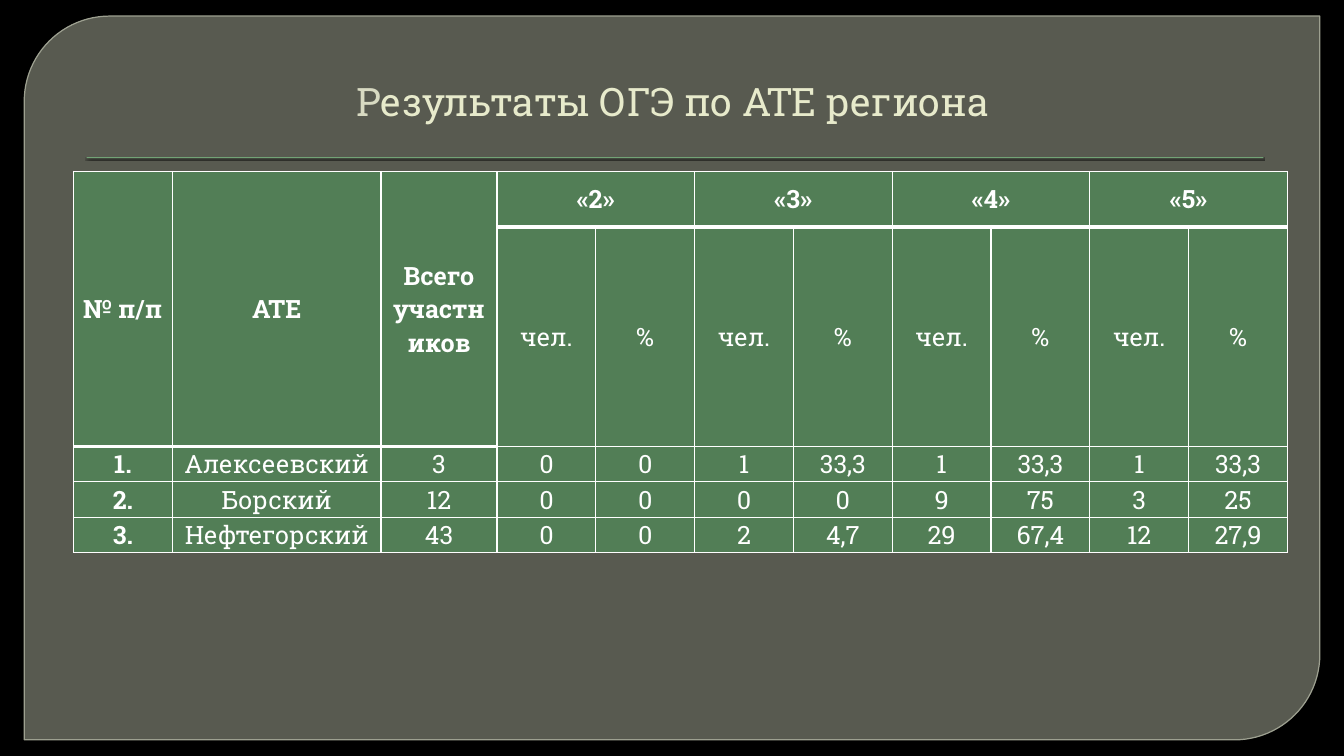
"""Builds the slide with the table of exam results by territory."""
from lxml import etree
from pptx import Presentation
from pptx.dml.color import RGBColor
from pptx.enum import shapes, text
from pptx.oxml import ns
from pptx.util import Inches, Pt

BLACK = RGBColor(0x00, 0x00, 0x00)
PANEL = RGBColor(0x58, 0x5A, 0x50)
PANEL_EDGE = RGBColor(0x9D, 0xA0, 0x90)
RULE = RGBColor(0x72, 0xA3, 0x76)
TITLE_FIRST = RGBColor(0xD8, 0xDA, 0xC2)
TITLE = RGBColor(0xE7, 0xEA, 0xCB)
GREEN = RGBColor(0x52, 0x7E, 0x56)
WHITE = RGBColor(0xFF, 0xFF, 0xFF)
FONT = "Roboto Slab"

GRADES = ["«2»", "«3»", "«4»", "«5»"]
LABEL_COLUMNS = 3
HEADER_ROWS = 2
COLUMN_WIDTHS = [0.98, 2.07, 1.15] + [0.98] * 2 * len(GRADES)
ROW_HEIGHTS = [0.55, 2.18, 0.35, 0.35, 0.35]
ROWS = [
    ["№ п/п", "АТЕ", "Всего участников"] + [part for grade in GRADES for part in (grade, "")],
    [""] * LABEL_COLUMNS + ["чел.", "%"] * len(GRADES),
    ["1.", "Алексеевский", "3", "0", "0", "1", "33,3", "1", "33,3", "1", "33,3"],
    ["2.", "Борский", "12", "0", "0", "0", "0", "9", "75", "3", "25"],
    ["3.", "Нефтегорский", "43", "0", "0", "2", "4,7", "29", "67,4", "12", "27,9"],
]


def add_span(para, words, size, color, bold=False):
    span = para.add_run()
    span.text = words
    span.font.name = FONT
    span.font.size = Pt(size)
    span.font.bold = bold
    span.font.color.rgb = color


def add_border(cell, side, width):
    properties = cell._tc.get_or_add_tcPr()
    line = etree.SubElement(properties, ns.qn(f"a:ln{side}"), w=str(Pt(width)))
    fill = etree.SubElement(line, ns.qn("a:solidFill"))
    etree.SubElement(fill, ns.qn("a:srgbClr"), val=str(WHITE))


deck = Presentation()
deck.slide_width = Inches(13.33)
deck.slide_height = Inches(7.5)
page = deck.slides.add_slide(deck.slide_layouts[5])
page.background.fill.solid()
page.background.fill.fore_color.rgb = BLACK

title = page.shapes.title
title.left, title.top = Inches(0.64), Inches(0.68)
title.width, title.height = Inches(12), Inches(0.6)
frame = title.text_frame
frame.word_wrap = True
frame.auto_size = text.MSO_AUTO_SIZE.NONE
frame.vertical_anchor = text.MSO_ANCHOR.BOTTOM
frame.margin_left = Inches(0.16)
heading = frame.paragraphs[0]
heading.alignment = text.PP_ALIGN.CENTER
add_span(heading, "Р", 28, TITLE_FIRST)
add_span(heading, "езультаты ОГЭ по АТЕ региона", 28, TITLE)

panel = page.shapes.add_shape(
    shapes.MSO_SHAPE.ROUND_2_DIAG_RECTANGLE,
    Inches(0.24), Inches(0.16), Inches(12.85), Inches(7.18))
panel.adjustments[0] = 0.118
panel.adjustments[1] = 0
panel.shadow.inherit = False
panel.fill.solid()
panel.fill.fore_color.rgb = PANEL
panel.line.color.rgb = PANEL_EDGE
panel.line.width = Pt(0.87)

rule = page.shapes.add_shape(
    shapes.MSO_SHAPE.RECTANGLE,
    Inches(0.86), Inches(1.56), Inches(11.67), Inches(0.01))
rule.shadow.inherit = False
rule.fill.solid()
rule.fill.fore_color.rgb = RULE
rule.line.fill.background()
effects = rule.element.spPr.find(ns.qn("a:effectLst"))
shadow = etree.SubElement(effects, ns.qn("a:outerShdw"), blurRad=str(Pt(1)),
                          dist=str(Pt(1)), dir="5400000", algn="tl", rotWithShape="0")
shade = etree.SubElement(shadow, ns.qn("a:srgbClr"), val=str(BLACK))
etree.SubElement(shade, ns.qn("a:alpha"), val="75000")

for backdrop in (panel, rule):
    title.element.addprevious(backdrop.element)

results = page.shapes.add_table(
    len(ROWS), len(COLUMN_WIDTHS), Inches(0.73), Inches(1.7),
    Inches(sum(COLUMN_WIDTHS)), Inches(sum(ROW_HEIGHTS))).table
results.horz_banding = False
for column, width in zip(results.columns, COLUMN_WIDTHS):
    column.width = Inches(width)
for row, height in zip(results.rows, ROW_HEIGHTS):
    row.height = Inches(height)
for column in range(LABEL_COLUMNS):
    results.cell(0, column).merge(results.cell(1, column))
for column in range(LABEL_COLUMNS, len(COLUMN_WIDTHS), 2):
    results.cell(0, column).merge(results.cell(0, column + 1))

for row, entries in enumerate(ROWS):
    for column, words in enumerate(entries):
        cell = results.cell(row, column)
        is_label = column < LABEL_COLUMNS
        heavy_bottom = row == 0 or (row == 1 and is_label)
        heavy_top = row == (HEADER_ROWS if is_label else 1)
        add_border(cell, "L", 1)
        add_border(cell, "R", 1)
        add_border(cell, "T", 3 if heavy_top else 1)
        add_border(cell, "B", 3 if heavy_bottom else 1)
        cell.fill.solid()
        cell.fill.fore_color.rgb = GREEN
        cell.vertical_anchor = text.MSO_ANCHOR.MIDDLE
        cell.margin_left = cell.margin_right = Inches(0.07)
        cell.margin_top = cell.margin_bottom = 0
        if words:
            para = cell.text_frame.paragraphs[0]
            para.alignment = text.PP_ALIGN.CENTER
            bold = row == 0 or (row >= HEADER_ROWS and column == 0)
            add_span(para, words, 18, WHITE, bold)

deck.save("out.pptx")
